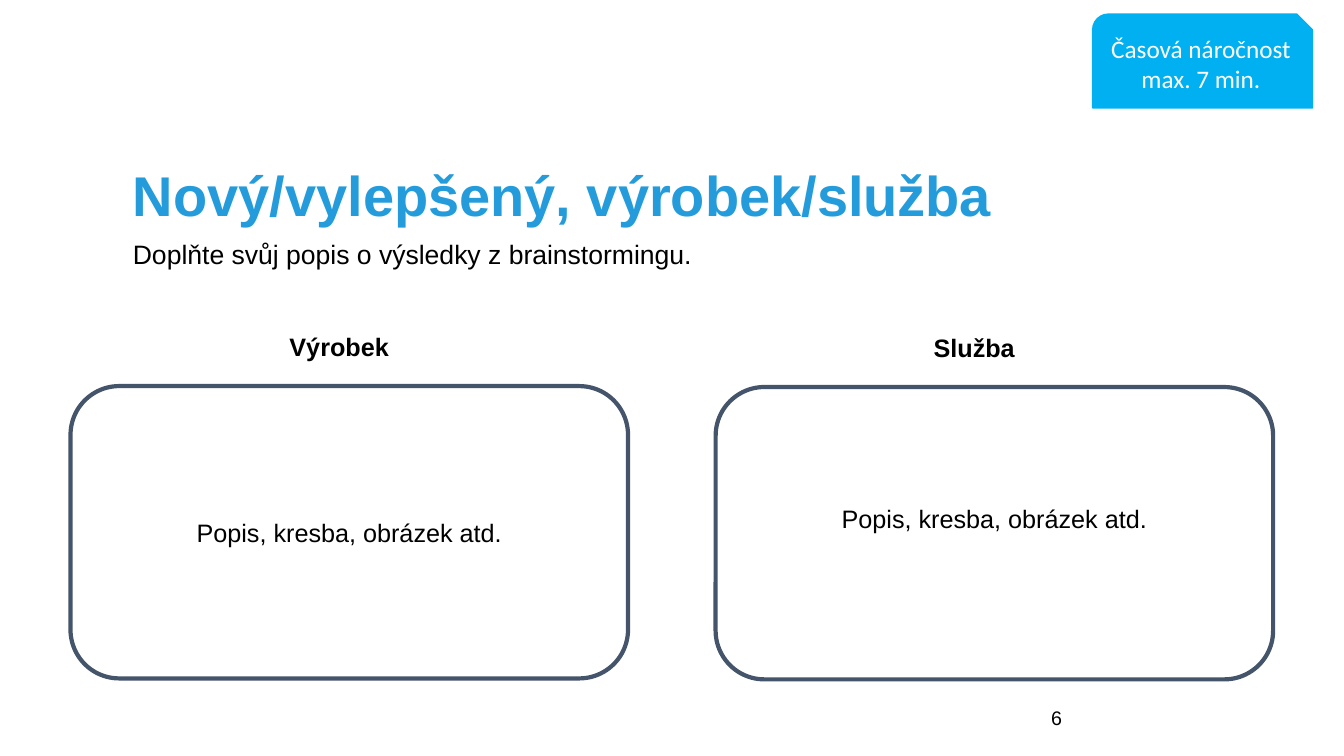
from pptx import Presentation
from pptx.dml.color import RGBColor
from pptx.enum.shapes import MSO_SHAPE
from pptx.enum.text import MSO_ANCHOR, PP_ALIGN
from pptx.util import Pt

ROUNDED = MSO_SHAPE.ROUNDED_RECTANGLE
SNIPPED = MSO_SHAPE.SNIP_ROUND_RECTANGLE
LEFT, CENTER = PP_ALIGN.LEFT, PP_ALIGN.CENTER
TOP, MIDDLE = MSO_ANCHOR.TOP, MSO_ANCHOR.MIDDLE
BLACK, WHITE = "000000", "FFFFFF"
CYAN, BLUE, SLATE = "00B0F0", "249CDC", "44546A"


def color(value):
    """Return a colour from its hex string."""
    return RGBColor.from_string(value)


def write(sp, lines, size, hue=BLACK, font="Arial", bold=False,
          align=LEFT, anchor=TOP, spacing=1.0):
    """Write one formatted paragraph per line into a shape."""
    tf = sp.text_frame
    tf.word_wrap = True
    tf.vertical_anchor = anchor
    for i, line in enumerate(lines):
        p = tf.add_paragraph() if i else tf.paragraphs[0]
        p.alignment = align
        p.line_spacing = spacing
        r = p.add_run()
        r.text = line
        r.font.size = Pt(size)
        r.font.name = font
        r.font.bold = bold
        r.font.color.rgb = color(hue)


def add_text(s, box, text, size, **style):
    """Add a text box holding one line."""
    sp = s.shapes.add_textbox(*map(Pt, box))
    write(sp, [text], size, **style)


def add_panel(s, kind, box, fill, line, width):
    """Add a filled and outlined shape without a shadow."""
    sp = s.shapes.add_shape(kind, *map(Pt, box))
    sp.shadow.inherit = False
    sp.fill.solid()
    sp.fill.fore_color.rgb = color(fill)
    sp.line.color.rgb = color(line)
    sp.line.width = Pt(width)
    return sp


def add_heading(s, box):
    """Place the title and the instruction below it."""
    x, y, w, h = box
    sp = s.shapes.title
    sp.left, sp.top, sp.width, sp.height = map(Pt, box)
    write(sp, ["Nový/vylepšený, výrobek/služba"], 40, hue=BLUE, bold=True,
          anchor=MIDDLE, spacing=0.9)
    add_text(s, (x, y + 84.2, w, 395.3),
             "Doplňte svůj popis o výsledky z brainstormingu.", 19, spacing=0.9)


def add_badge(s, box):
    """Place the time limit badge."""
    sp = add_panel(s, SNIPPED, box, CYAN, CYAN, 1)
    write(sp, ["Časová náročnost", "max. 7 min."], 18, hue=WHITE,
          font="Calibri", align=CENTER, anchor=MIDDLE)


def add_column(s, box, label, indent, lift):
    """Place a labelled frame, its text raised by the given lift."""
    x, y, w, h = box
    add_text(s, (x + indent, y - 42.8, 170.6, 29.1), label, 18,
             bold=True, align=CENTER)
    sp = add_panel(s, ROUNDED, box, WHITE, SLATE, 3)
    write(sp, ["Popis, kresba, obrázek atd."], 18, align=CENTER, anchor=MIDDLE)
    sp.text_frame.margin_bottom = Pt(3.6 + 2 * lift)


def main():
    """Build the slide and save it."""
    prs = Presentation()
    prs.slide_width, prs.slide_height = Pt(960), Pt(540)
    s = prs.slides.add_slide(prs.slide_layouts[5])
    add_heading(s, (87.8, 85, 805, 113.8))
    add_text(s, (743.8, 500.4, 216, 28.8), "6", 14)
    add_badge(s, (780.5, 10.1, 157, 67))
    add_column(s, (50.4, 275.8, 398.2, 208.8), "Výrobek", 106.6, 0)
    add_column(s, (511.2, 276.5, 398.2, 208.8), "Služba", 99.4, 10.3)
    prs.save("out.pptx")


if __name__ == "__main__":
    main()
